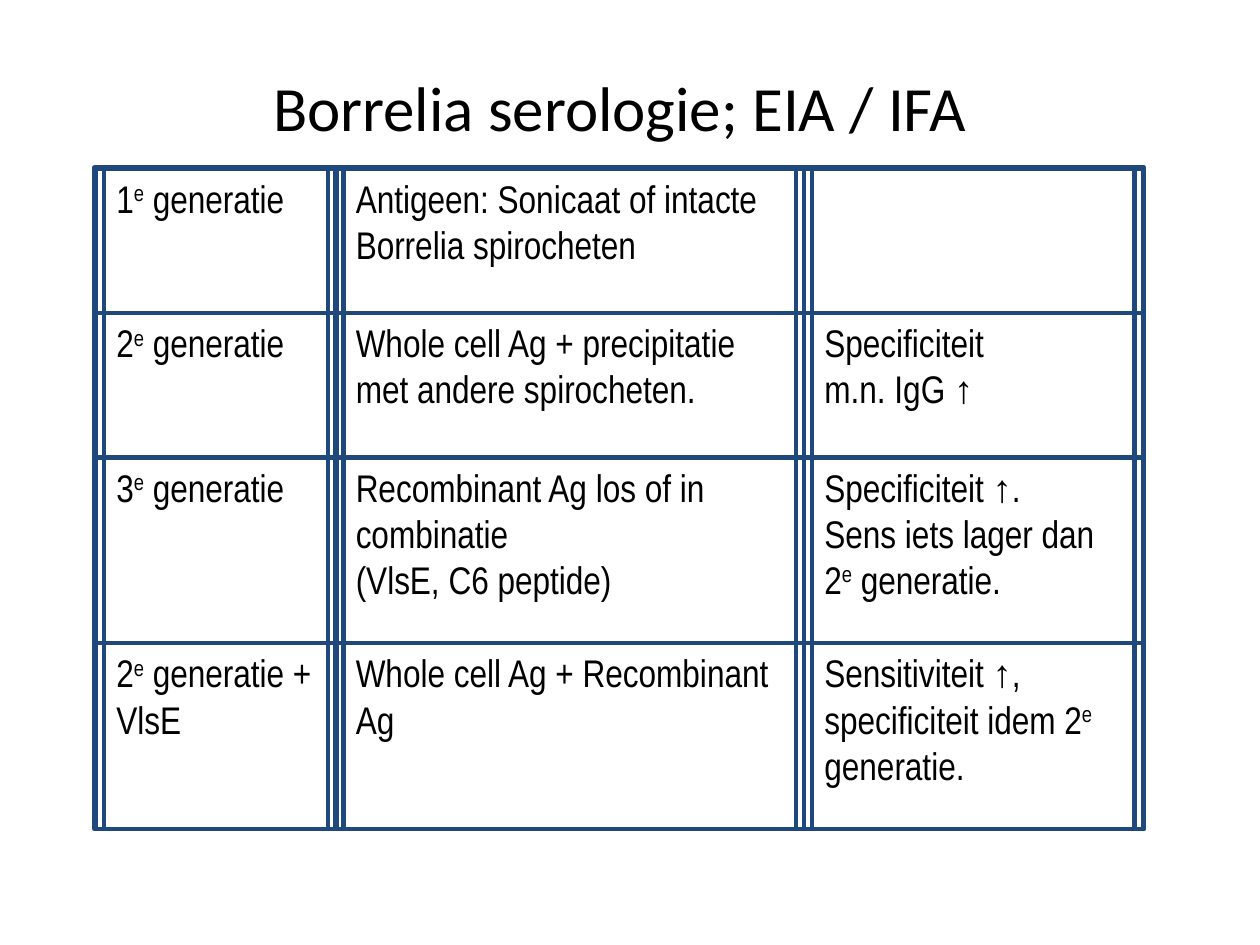
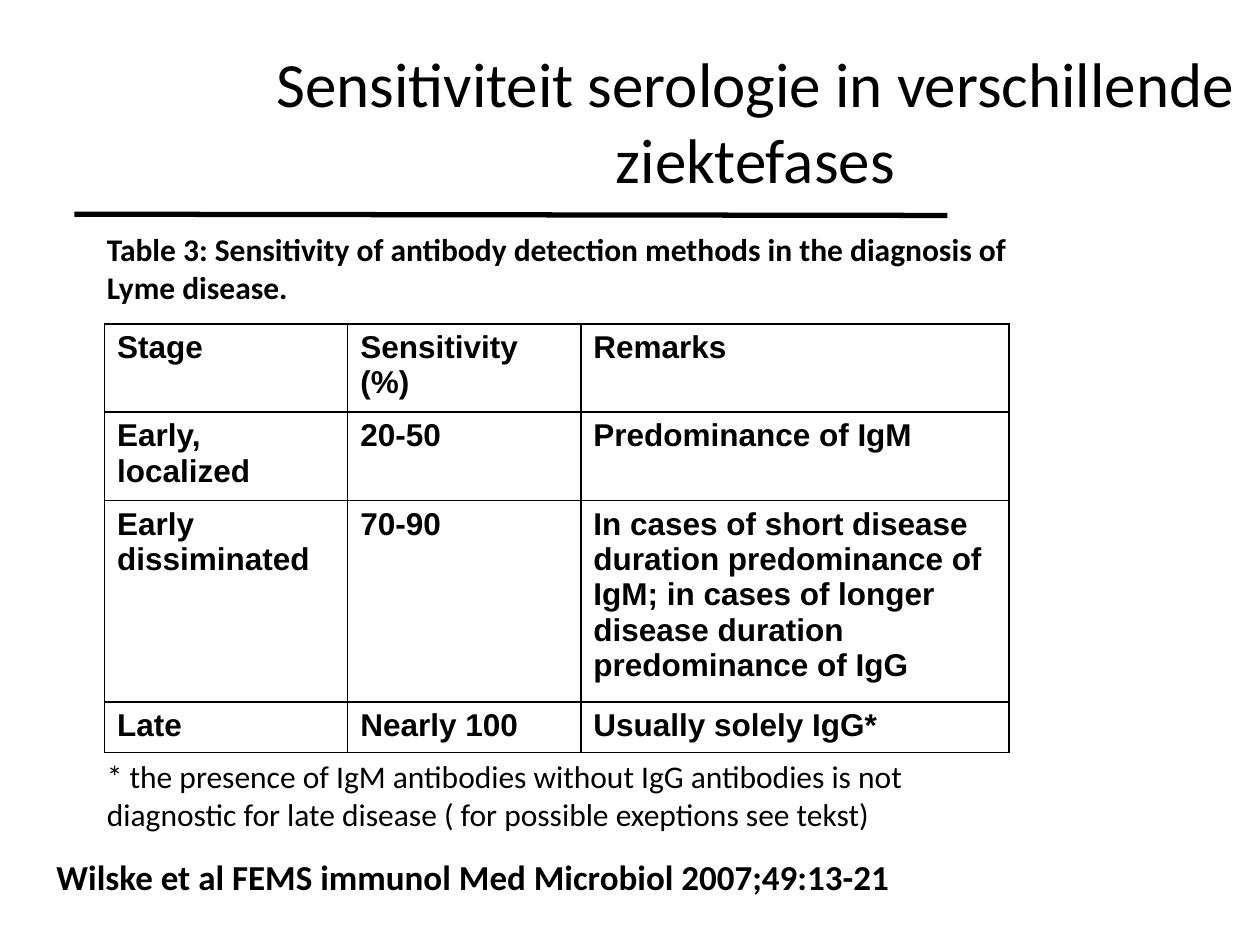
from lxml.etree import SubElement
from pptx import Presentation
from pptx.dml.color import RGBColor
from pptx.enum.shapes import MSO_CONNECTOR, MSO_SHAPE
from pptx.enum.text import MSO_ANCHOR, MSO_AUTO_SIZE, PP_ALIGN
from pptx.oxml.ns import qn
from pptx.util import Inches, Pt

BLACK = RGBColor(0x00, 0x00, 0x00)
NAVY = RGBColor(0x1F, 0x49, 0x7D)

TITLE = {"name": "Calibri", "size": Pt(36), "bold": False}
GENERATION = {"name": "Arial Narrow", "size": Pt(22), "bold": False}
STAGE = {"name": "Arial", "size": Pt(18), "bold": True}
CAPTION = {"name": "Calibri", "size": Pt(18), "bold": True}
FOOTNOTE = {"name": "Calibri", "size": Pt(18), "bold": False}
REFERENCE = {"name": "Calibri", "size": Pt(20), "bold": True}

GRID_TOP = 1.34
GRID_LEFTS = [0.76, 2.66, 6.38]
GRID_WIDTHS = [1.91, 3.72, 2.69]
GRID_HEIGHTS = [1.145, 1.145, 1.475, 1.475]
CELL_GAP = 0.065
GENERATIONS = [
    ["1^e^ generatie", "Antigeen: Sonicaat of intacte Borrelia spirocheten", ""],
    ["2^e^ generatie", "Whole cell Ag + precipitatie met andere spirocheten.",
     "Specificiteit\nm.n. IgG ↑"],
    ["3^e^ generatie", "Recombinant Ag los of in combinatie\n(VlsE, C6 peptide)",
     "Specificiteit ↑.\nSens iets lager dan 2^e^ generatie."],
    ["2^e^ generatie + VlsE", "Whole cell Ag + Recombinant Ag",
     "Sensitiviteit ↑, specificiteit idem 2^e^ generatie."],
]

STAGE_WIDTHS = [1.93, 1.85, 3.4]
STAGE_HEIGHTS = [0.7, 0.7, 1.6, 0.4]
STAGES = [
    ["Stage", "Sensitivity (%)", "Remarks"],
    ["Early, localized", "20-50", "Predominance of IgM"],
    ["Early dissiminated", "70-90",
     "In cases of short disease duration predominance of IgM; "
     "in cases of longer disease duration predominance of IgG"],
    ["Late", "Nearly 100", "Usually solely IgG*"],
]


def write_text(text_frame, text, style, alignment=PP_ALIGN.LEFT):
    """Write one paragraph per line; text between ^ marks is superscript."""
    text_frame.word_wrap = True
    for index, line in enumerate(text.split("\n")):
        paragraph = text_frame.add_paragraph() if index else text_frame.paragraphs[0]
        paragraph.alignment = alignment
        for part, words in enumerate(line.split("^")):
            run = paragraph.add_run()
            run.text = words
            run.font.color.rgb = BLACK
            for name, value in style.items():
                setattr(run.font, name, value)
            if part % 2:
                run.font._element.set("baseline", "30000")


def add_text(slide, box, text, style):
    shape = slide.shapes.add_textbox(*map(Inches, box))
    write_text(shape.text_frame, text, style)
    shape.text_frame.auto_size = MSO_AUTO_SIZE.SHAPE_TO_FIT_TEXT


def add_title(slide, box, text):
    shape = slide.shapes.add_textbox(*map(Inches, box))
    shape.text_frame.vertical_anchor = MSO_ANCHOR.MIDDLE
    write_text(shape.text_frame, text, TITLE, PP_ALIGN.CENTER)


def add_frame(shapes, left, top, width, height):
    """Add an unfilled rectangle with a navy outline."""
    frame = shapes.add_shape(MSO_SHAPE.RECTANGLE, *map(Inches, (left, top, width, height)))
    frame.shadow.inherit = False
    frame.fill.background()
    frame.line.color.rgb = NAVY
    frame.line.width = Pt(2.5)
    return frame


def add_generation_grid(slide):
    """Add the grid of double-framed cells inside one outer frame."""
    shapes = slide.shapes.add_group_shape().shapes
    top = GRID_TOP
    for texts, height in zip(GENERATIONS, GRID_HEIGHTS):
        for left, width, text in zip(GRID_LEFTS, GRID_WIDTHS, texts):
            cell = add_frame(shapes, left + CELL_GAP, top, width - 2 * CELL_GAP, height)
            if text:
                cell.text_frame.vertical_anchor = MSO_ANCHOR.TOP
                write_text(cell.text_frame, text, GENERATION)
            add_frame(shapes, left, top, width, height)
        top += height
    add_frame(shapes, 0.75, 1.33, 8.33, 5.25)


def set_borders(cell):
    properties = cell._tc.get_or_add_tcPr()
    for position, side in enumerate(("lnL", "lnR", "lnT", "lnB")):
        line = SubElement(properties, qn(f"a:{side}"), w=str(Pt(1)))
        fill = SubElement(line, qn("a:solidFill"))
        SubElement(fill, qn("a:srgbClr"), val=str(BLACK))
        properties.insert(position, line)


def add_stage_table(slide):
    box = map(Inches, (0.83, 2.57, sum(STAGE_WIDTHS), sum(STAGE_HEIGHTS)))
    table = slide.shapes.add_table(len(STAGES), len(STAGE_WIDTHS), *box).table
    table.first_row = table.horz_banding = False
    for column, width in zip(table.columns, STAGE_WIDTHS):
        column.width = Inches(width)
    for row, height, texts in zip(table.rows, STAGE_HEIGHTS, STAGES):
        row.height = Inches(height)
        for cell, text in zip(row.cells, texts):
            cell.fill.background()
            write_text(cell.text_frame, text, STAGE)
            set_borders(cell)


def add_rule(slide, start, end):
    rule = slide.shapes.add_connector(MSO_CONNECTOR.STRAIGHT, *map(Inches, start + end))
    rule.line.color.rgb = BLACK
    rule.line.width = Pt(3)
    SubElement(rule._element.spPr, qn("a:effectLst"))


def build_generations_slide(slide):
    add_title(slide, (1.42, 0.22, 7, 1.25), "Borrelia serologie; EIA / IFA")
    add_generation_grid(slide)


def build_sensitivity_slide(slide):
    add_title(slide, (2.01, 0.33, 7.97, 1.25),
              "Sensitiviteit serologie in verschillende ziektefases")
    add_text(slide, (0.35, 6.74, 8.03, 0.43),
             "Wilske et al FEMS immunol Med Microbiol 2007;49:13-21", REFERENCE)
    add_stage_table(slide)
    add_text(slide, (0.75, 1.78, 7.4, 0.7),
             "Table 3: Sensitivity of antibody detection methods in the diagnosis "
             "of Lyme disease.", CAPTION)
    add_text(slide, (0.75, 5.96, 7.32, 0.7),
             "* the presence of IgM antibodies without IgG antibodies is not diagnostic "
             "for late disease ( for possible exeptions see tekst)", FOOTNOTE)
    add_rule(slide, (0.59, 1.7), (7.52, 1.71))


def main():
    presentation = Presentation()
    presentation.slide_width = Inches(10)
    presentation.slide_height = Inches(7.5)
    blank_layout = presentation.slide_layouts[6]
    for build in (build_generations_slide, build_sensitivity_slide):
        build(presentation.slides.add_slide(blank_layout))
    presentation.save("out.pptx")


if __name__ == "__main__":
    main()
